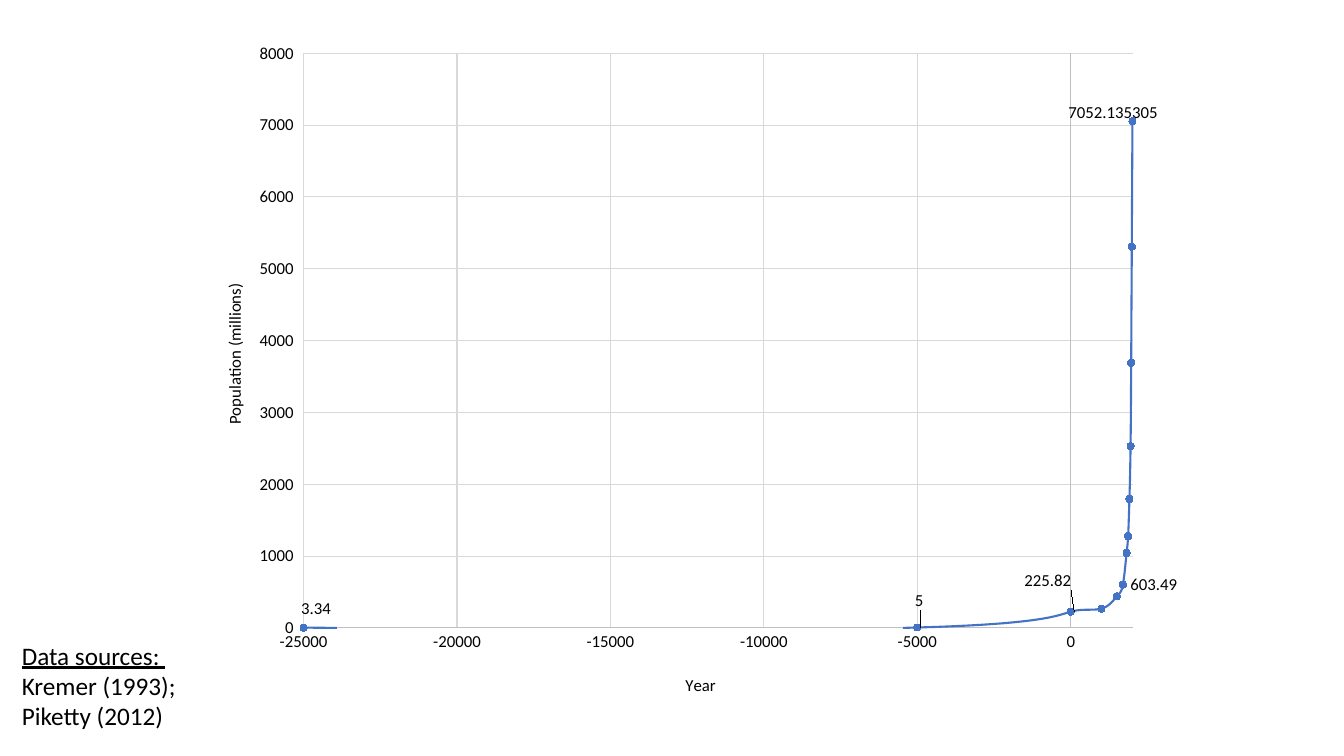
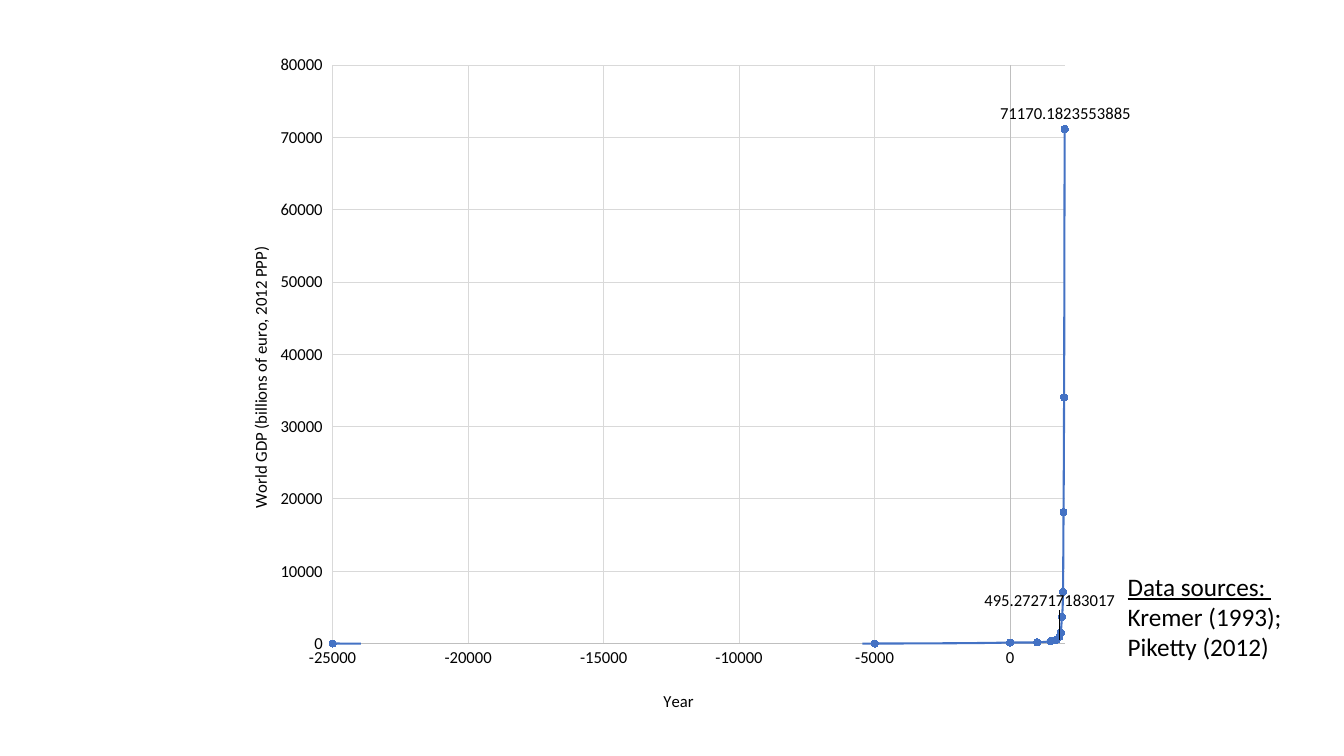
"""Two scatter slides on world population and output since 25000 BC."""
from dataclasses import dataclass

from lxml import etree
from pptx import Presentation
from pptx import util as u
from pptx.chart.data import XyChartData
from pptx.dml.color import RGBColor
from pptx.enum import chart as ec
from pptx.oxml import ns


@dataclass(frozen=True)
class Theme:
    """Colours, font and type sizes."""
    font: str = "Calibri"
    ink: RGBColor = RGBColor(0, 0, 0)
    blue: RGBColor = RGBColor(0x44, 0x72, 0xC4)
    axis: RGBColor = RGBColor(0xBF, 0xBF, 0xBF)
    grid: RGBColor = RGBColor(0xD9, 0xD9, 0xD9)
    small: int = 12
    body: int = 18


T = Theme()
YEARS = (-25000, -5000, 0, 1000, 1500, 1700, 1820, 1870,
         1913, 1950, 1970, 1990, 2012)
PEOPLE = (3.34, 5, 225.82, 267.33, 438.43, 603.49, 1041.71, 1275.73,
          1792.92, 2527.96, 3691.16, 5306.43, 7052.135305)
OUTPUT = (2.1, 3.14, 141.98, 162.58, 330.53, 495.272717183017, 930.12,
          1495.9, 3678.08, 7133.9, 18144.36, 34051.59, 71170.1823553885)


def style(font, size):
    """Set face, size and colour of a font."""
    font.name, font.size, font.bold = T.font, u.Pt(size), False
    font.color.rgb = T.ink


def stroke(line, color, width=0.75):
    """Set colour and width of a line."""
    line.color.rgb = color
    line.width = u.Pt(width)


def layout(**parts):
    """Make a manual chart layout from its parts."""
    root = etree.Element(ns.qn("c:layout"))
    box = etree.SubElement(root, ns.qn("c:manualLayout"))
    for name, val in parts.items():
        etree.SubElement(box, ns.qn("c:" + name), val=str(val))
    return root


def place(node, new):
    """Swap the layout of a chart node, or add one after its first child."""
    for old in node.findall(ns.qn("c:layout")):
        node.remove(old)
    first = node.tag == ns.qn("c:plotArea")
    node.insert(0 if first else 1, new)


def dress(axis, title, spot):
    """Format an axis, its grid and its title."""
    axis.has_major_gridlines = True
    stroke(axis.major_gridlines.format.line, T.grid)
    stroke(axis.format.line, T.axis)
    axis.major_tick_mark = axis.minor_tick_mark = ec.XL_TICK_MARK.NONE
    style(axis.tick_labels.font, T.small)
    frame = axis.axis_title.text_frame
    run = frame.paragraphs[0].add_run()
    run.text = title
    style(run.font, T.small)
    left, top = spot
    place(axis.axis_title._element,
          layout(xMode="edge", yMode="edge", x=left, y=top))
    return frame


def label(series, marks):
    """Show the values of chosen points, each shifted from its right side."""
    for idx, (dx, dy) in marks.items():
        tag = series.points[idx].data_label
        tag.position = ec.XL_LABEL_POSITION.RIGHT
        if dx or dy:
            node = series._element.xpath(f"c:dLbls/c:dLbl[c:idx/@val='{idx}']")[0]
            place(node, layout(x=dx, y=dy))
    for flag in series._element.xpath("c:dLbls/c:showVal"):
        flag.set("val", "0")


def curve(slide, box, title, vals, plot, spots, step, marks):
    """Add a smooth scatter chart over the years."""
    data = XyChartData()
    row = data.add_series("Series 1")
    for year, val in zip(YEARS, vals):
        row.add_data_point(year, val)
    chart = slide.shapes.add_chart(
        ec.XL_CHART_TYPE.XY_SCATTER_SMOOTH, *map(u.Cm, box), data).chart
    chart.has_legend = chart.has_title = False
    style(chart.font, T.small)
    chart.plots[0].vary_by_categories = False

    across, up = chart.category_axis, chart.value_axis
    across.minimum_scale, across.maximum_scale = -25000, 2020
    across.major_unit = 5000
    up.minimum_scale, up.maximum_scale, up.major_unit = 0, 8 * step, step
    up.tick_label_position = ec.XL_TICK_LABEL_POSITION.LOW
    dress(across, "Year", spots[0])
    turn = dress(up, title, spots[1])._element.bodyPr
    turn.set("rot", "-5400000")
    turn.set("vert", "horz")

    line = chart.plots[0].series[0]
    stroke(line.format.line, T.blue, 1.5)
    dot = line.marker
    dot.style, dot.size = ec.XL_MARKER_STYLE.CIRCLE, 5
    dot.format.fill.solid()
    dot.format.fill.fore_color.rgb = T.blue
    stroke(dot.format.line, T.blue)
    label(line, marks)
    for flag in line._element.xpath("c:smooth"):
        flag.set("val", "1")
    area = dict(zip("xywh", plot))
    place(chart._chartSpace.xpath("c:chart/c:plotArea")[0],
          layout(layoutTarget="inner", xMode="edge", yMode="edge", **area))


def source(slide, left, top):
    """Add the note on data sources."""
    box = slide.shapes.add_textbox(*map(u.Cm, (left, top, 5.74, 2.56)))
    frame = box.text_frame
    frame.word_wrap = True
    lines = (("Data sources: ", True), ("Kremer (1993); Piketty (2012)", False))
    for idx, (words, under) in enumerate(lines):
        para = frame.add_paragraph() if idx else frame.paragraphs[0]
        run = para.add_run()
        run.text = words
        style(run.font, T.body)
        run.font.underline = under


def main():
    """Build and save the deck."""
    deck = Presentation()
    deck.slide_width, deck.slide_height = u.Cm(33.87), u.Cm(19.05)
    blank = deck.slide_layouts[6]

    slide = deck.slides.add_slide(blank)
    curve(slide, (4.93, 0.74, 24.74, 17.2), "Population (millions)", PEOPLE,
          (0.11, 0.035, 0.845, 0.842), ((0.496, 0.94), (0.025, 0.368)), 1000,
          {0: (-0.01, -0.028), 1: (-0.01, -0.04), 2: (-0.055, -0.045),
           5: (0, 0), 12: (-0.073, -0.013)})
    source(slide, 0.3, 16)

    slide = deck.slides.add_slide(blank)
    curve(slide, (5.59, 1.04, 22.91, 17.27),
          "World GDP (billions of euro, 2012 PPP)", OUTPUT,
          (0.123, 0.035, 0.813, 0.844), ((0.487, 0.942), (0.027, 0.292)), 10000,
          {5: (-0.088, -0.058), 12: (-0.08, -0.023)})
    source(slide, 28.17, 14.27)

    deck.save("out.pptx")


if __name__ == "__main__":
    main()
